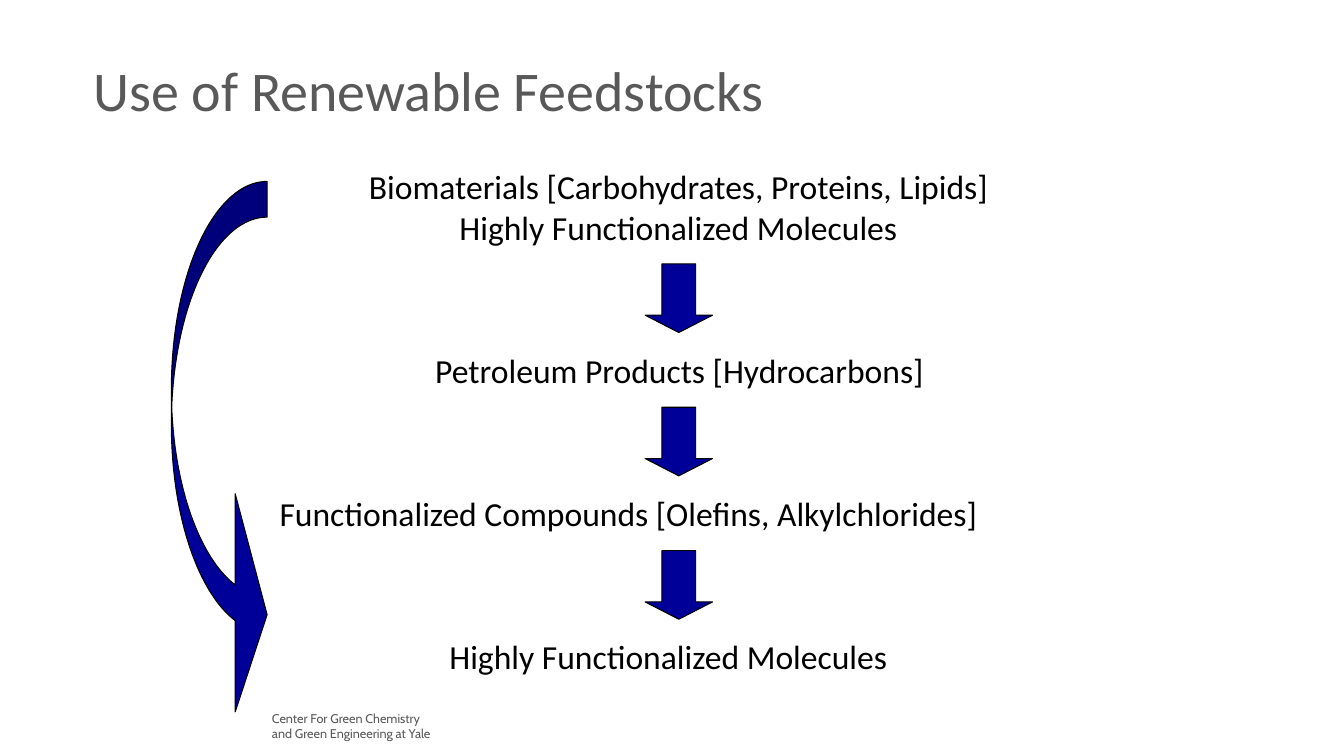
from pptx import Presentation
from pptx.dml.color import RGBColor
from pptx.enum.shapes import MSO_SHAPE
from pptx.enum.text import MSO_AUTO_SIZE, PP_ALIGN
from pptx.util import Pt

BLUE, BLACK, GRAY = "000099", "000000", "595959"
STEP = 102.4
ARROW_TOP, PRODUCT_TOP = 188.5, 246.2
PRODUCTS = [
    ("Petroleum Products [Hydrocarbons]", 303.8, 366.5),
    ("Functionalized Compounds [Olefins, Alkylchlorides]", 192.6, 518),
    ("Highly Functionalized Molecules", 313.9, 342),
]
TITLE = {"size": Pt(40), "name": "Calibri"}
STAGE = {"size": Pt(24), "name": "Calibri"}
CREDIT = {"size": Pt(9), "name": "Cabin"}


def color(hex_value):
    """Return the colour for a hex string."""
    return RGBColor.from_string(hex_value)


def add_label(slide, box, lines, style, ink=BLACK, align=PP_ALIGN.LEFT):
    """Add an unwrapped text box with one paragraph per line."""
    frame = slide.shapes.add_textbox(*map(Pt, box)).text_frame
    frame_format = {"word_wrap": False, "auto_size": MSO_AUTO_SIZE.SHAPE_TO_FIT_TEXT}
    for key, value in frame_format.items():
        setattr(frame, key, value)
    frame.text = "\n".join(lines)
    for paragraph in frame.paragraphs:
        paragraph.alignment = align
        for key, value in style.items():
            setattr(paragraph.font, key, value)
        paragraph.font.color.rgb = color(ink)


def add_block_arrow(slide, preset, box, adjustments):
    """Add a blue block arrow with a thin black outline."""
    arrow = slide.shapes.add_shape(preset, *map(Pt, box))
    arrow.shadow.inherit = False
    for index, value in enumerate(adjustments):
        arrow.adjustments[index] = value
    arrow.fill.solid()
    arrow.fill.fore_color.rgb = color(BLUE)
    arrow.line.color.rgb = color(BLACK)
    arrow.line.width = Pt(0.75)


def main():
    """Build the feedstock slide and save it."""
    deck = Presentation()
    deck.slide_width, deck.slide_height = Pt(960), Pt(540)
    slide = deck.slides.add_slide(deck.slide_layouts[6])

    credit = ["Center For Green Chemistry", "and Green Engineering at Yale"]
    add_label(slide, (187.2, 504, 133.9, 28.8), credit, CREDIT, GRAY)
    add_label(slide, (59.8, 36, 508.3, 55.4), ["Use of Renewable Feedstocks"], TITLE, GRAY)

    biomaterials = ["Biomaterials [Carbohydrates, Proteins, Lipids]",
                    "Highly Functionalized Molecules"]
    add_label(slide, (254.2, 115.2, 460.8, 65.5), biomaterials, STAGE, align=PP_ALIGN.CENTER)
    for level, (product, left, width) in enumerate(PRODUCTS):
        offset = level * STEP
        add_block_arrow(slide, MSO_SHAPE.DOWN_ARROW,
                        (460.8, ARROW_TOP + offset, 48.2, 49), (0.5, 0.257))
        add_label(slide, (left, PRODUCT_TOP + offset, width, 36), [product], STAGE)
    add_block_arrow(slide, MSO_SHAPE.CURVED_RIGHT_ARROW,
                    (122.4, 129.6, 68.4, 387.4), (0.373, 2.279, 0.333))

    deck.save("out.pptx")


if __name__ == "__main__":
    main()
